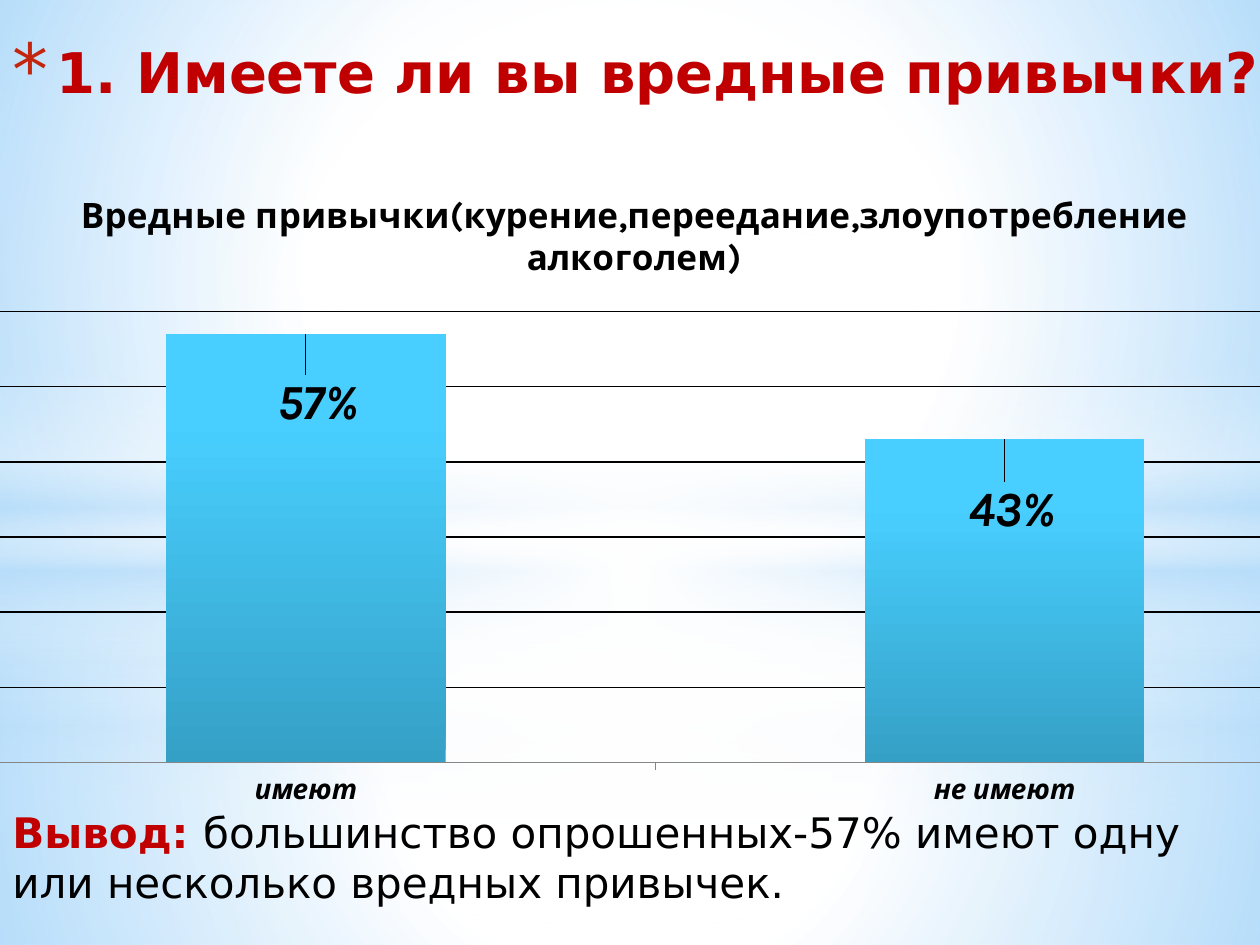
from lxml import etree
from pptx import Presentation
from pptx.chart.data import CategoryChartData
from pptx.dml.color import RGBColor
from pptx.enum.chart import XL_CHART_TYPE, XL_LABEL_POSITION, XL_TICK_LABEL_POSITION, XL_TICK_MARK
from pptx.enum.shapes import MSO_SHAPE
from pptx.enum.text import MSO_ANCHOR, MSO_AUTO_SIZE, PP_ALIGN
from pptx.oxml import parse_xml
from pptx.oxml.ns import nsdecls, qn
from pptx.util import Pt

COLORS = {"white": "FFFFFF", "sky": "B4DCFA", "red": "C00000", "bullet": "C3260C",
          "black": "000000", "axis": "868686", "bar_low": "35A0C6",
          "bar_mid": "48CFFF", "bar_top": "49CFFF"}
TEXT_FONT, CHART_FONT = "DejaVu Sans", "Karla"
CHART_TITLE = "Вредные привычки(курение,переедание,злоупотребление алкоголем)"
ANSWERS = {"имеют": 0.57, "не имеют": 0.43}
LABEL_SHIFTS = [(0.008, 0.155), (0.005, 0.158)]
WIDTH, HEIGHT = 720, 540


def rgb(name):
    return RGBColor.from_string(COLORS[name])


def set_gradient(fmt, spPr, stops, angle=None):
    """Fill with (position, colour, opacity) stops; circular when there is no angle."""
    fmt.background()
    gs = "".join(f'<a:gs pos="{pos * 1000}"><a:srgbClr val="{COLORS[color]}">'
                 f'<a:alpha val="{alpha * 1000}"/></a:srgbClr></a:gs>'
                 for pos, color, alpha in stops)
    if angle is None:
        course = ('<a:path path="circle"><a:fillToRect l="50000" t="50000" '
                  'r="50000" b="50000"/></a:path>')
    else:
        course = f'<a:lin ang="{angle * 60000}" scaled="0"/>'
    grad = parse_xml(f'<a:gradFill {nsdecls("a")} rotWithShape="1">'
                     f'<a:gsLst>{gs}</a:gsLst>{course}</a:gradFill>')
    spPr.replace(spPr.find(qn("a:noFill")), grad)


def add_glow(s, kind, top, height, stops, angle=None):
    sp = s.shapes.add_shape(kind, 0, Pt(top), Pt(WIDTH), Pt(height))
    sp.shadow.inherit = False
    sp.line.fill.background()
    set_gradient(sp.fill, sp.element.spPr, stops, angle)


def add_background(s):
    band = [(0, "white", 0), (29, "white", 30), (45, "sky", 40),
            (55, "white", 26), (65, "sky", 60), (100, "white", 0)]
    # split between halves, band top, extra opacity, end of the white ellipse
    for split, band_top, extra, edge in ((402, 297, 0, 56), (304.5, 209, 1, 54)):
        lower = [(0, "white", 91 + extra), (37, "white", 76 + extra), (100, "sky", 79 + extra)]
        upper = [(0, "white", 89 + extra), (48, "white", 62 + extra), (100, "sky", 79 + extra)]
        add_glow(s, MSO_SHAPE.RECTANGLE, split, HEIGHT - split, lower)
        add_glow(s, MSO_SHAPE.RECTANGLE, 0, split, upper)
        add_glow(s, MSO_SHAPE.RECTANGLE, band_top, 180, band, 90)
        add_glow(s, MSO_SHAPE.OVAL, 126, 402, [(0, "white", 100), (edge, "white", 0)])


def add_run(p, text, size, color, bold):
    r = p.add_run()
    r.text = text
    r.font.name, r.font.size, r.font.bold = TEXT_FONT, Pt(size), bold
    r.font.color.rgb = rgb(color)


def add_star_bullet(p):
    pPr = p._p.get_or_add_pPr()
    pPr.set("marL", str(Pt(25.2)))
    pPr.set("indent", str(-Pt(25.2)))
    color = etree.SubElement(pPr, qn("a:buClr"))
    etree.SubElement(color, qn("a:srgbClr"), val=COLORS["bullet"])
    etree.SubElement(pPr, qn("a:buSzPct"), val="128000")
    etree.SubElement(pPr, qn("a:buFont"), typeface=TEXT_FONT)
    etree.SubElement(pPr, qn("a:buChar"), char="*")


def set_title(s, text):
    title = s.shapes.title
    title.element.getparent().append(title.element)  # in front of the background
    title.left, title.top, title.width, title.height = Pt(0), Pt(-13.7), Pt(748), Pt(77)
    tf = title.text_frame
    tf.word_wrap, tf.auto_size = True, MSO_AUTO_SIZE.NONE
    tf.vertical_anchor = MSO_ANCHOR.BOTTOM
    p = tf.paragraphs[0]
    p.alignment = PP_ALIGN.LEFT
    add_star_bullet(p)
    add_run(p, text, 32, "red", True)


def add_conclusion(s):
    tf = s.shapes.add_textbox(0, Pt(457.2), Pt(WIDTH), Pt(67.7)).text_frame
    tf.word_wrap = True
    p = tf.paragraphs[0]
    p.space_after = Pt(3)
    add_run(p, "Вывод: ", 24, "red", True)
    add_run(p, "большинство опрошенных-57% имеют одну или несколько вредных привычек.",
            24, "black", False)


def style_font(font, size, italic=False):
    font.name, font.size, font.bold, font.italic = CHART_FONT, Pt(size), True, italic
    font.color.rgb = rgb("black")


def manual_layout(**values):
    items = "".join(f'<c:{key} val="{val}"/>' for key, val in values.items())
    return parse_xml(f'<c:layout {nsdecls("c")}><c:manualLayout>{items}'
                     '</c:manualLayout></c:layout>')


def place_plot_area(chart):
    area = chart.element.find(".//" + qn("c:plotArea"))
    for old in area.findall(qn("c:layout")):
        area.remove(old)
    area.insert(0, manual_layout(layoutTarget="inner", xMode="edge", yMode="edge",
                                 x=0.0475, y=0.224, w=0.933, h=0.688))


def style_axes(chart):
    cat, val = chart.category_axis, chart.value_axis
    style_font(cat.tick_labels.font, 16, True)
    cat.format.line.color.rgb = rgb("axis")
    cat.major_tick_mark = XL_TICK_MARK.OUTSIDE
    val.minimum_scale, val.maximum_scale, val.major_unit = 0, 0.6, 0.1
    val.tick_label_position = XL_TICK_LABEL_POSITION.NONE
    val.major_tick_mark = XL_TICK_MARK.NONE
    val.format.line.fill.background()
    val.major_gridlines.format.line.color.rgb = rgb("black")
    val.major_gridlines.format.line.width = Pt(0.75)


def style_bars(plot):
    plot.gap_width, plot.vary_by_categories = 150, False
    series = plot.series[0]
    set_gradient(series.format.fill, series._element.spPr,
                 [(0, "bar_low", 100), (80, "bar_mid", 100), (100, "bar_top", 100)], 270)
    labels = series.data_labels
    labels.show_value = True
    labels.number_format, labels.number_format_is_linked = "0%", False
    style_font(labels.font, 28, True)
    for i, (dx, dy) in enumerate(LABEL_SHIFTS):
        label = series.points[i].data_label
        style_font(label.font, 28, True)
        label.position = XL_LABEL_POSITION.OUTSIDE_END
        dLbl = labels._element.findall(qn("c:dLbl"))[i]
        dLbl.insert(1, manual_layout(x=dx, y=dy))


def add_answer_chart(s):
    data = CategoryChartData(number_format="0%")
    data.categories = list(ANSWERS)
    data.add_series(CHART_TITLE, ANSWERS.values())
    chart = s.shapes.add_chart(XL_CHART_TYPE.COLUMN_CLUSTERED, Pt(-65.5), Pt(94.3),
                               Pt(856), Pt(374.4), data).chart
    chart.has_legend = False
    chart.font.name, chart.font.size = CHART_FONT, Pt(10)
    chart.has_title = True
    chart.chart_title.include_in_layout = False
    r = chart.chart_title.text_frame.paragraphs[0].add_run()
    r.text = CHART_TITLE
    style_font(r.font, 20)
    place_plot_area(chart)
    style_axes(chart)
    style_bars(chart.plots[0])


def main():
    prs = Presentation()
    prs.slide_width, prs.slide_height = Pt(WIDTH), Pt(HEIGHT)
    s = prs.slides.add_slide(prs.slide_layouts[5])
    add_background(s)
    set_title(s, "1. Имеете ли вы вредные привычки?")
    add_conclusion(s)
    add_answer_chart(s)
    prs.save("out.pptx")


if __name__ == "__main__":
    main()
